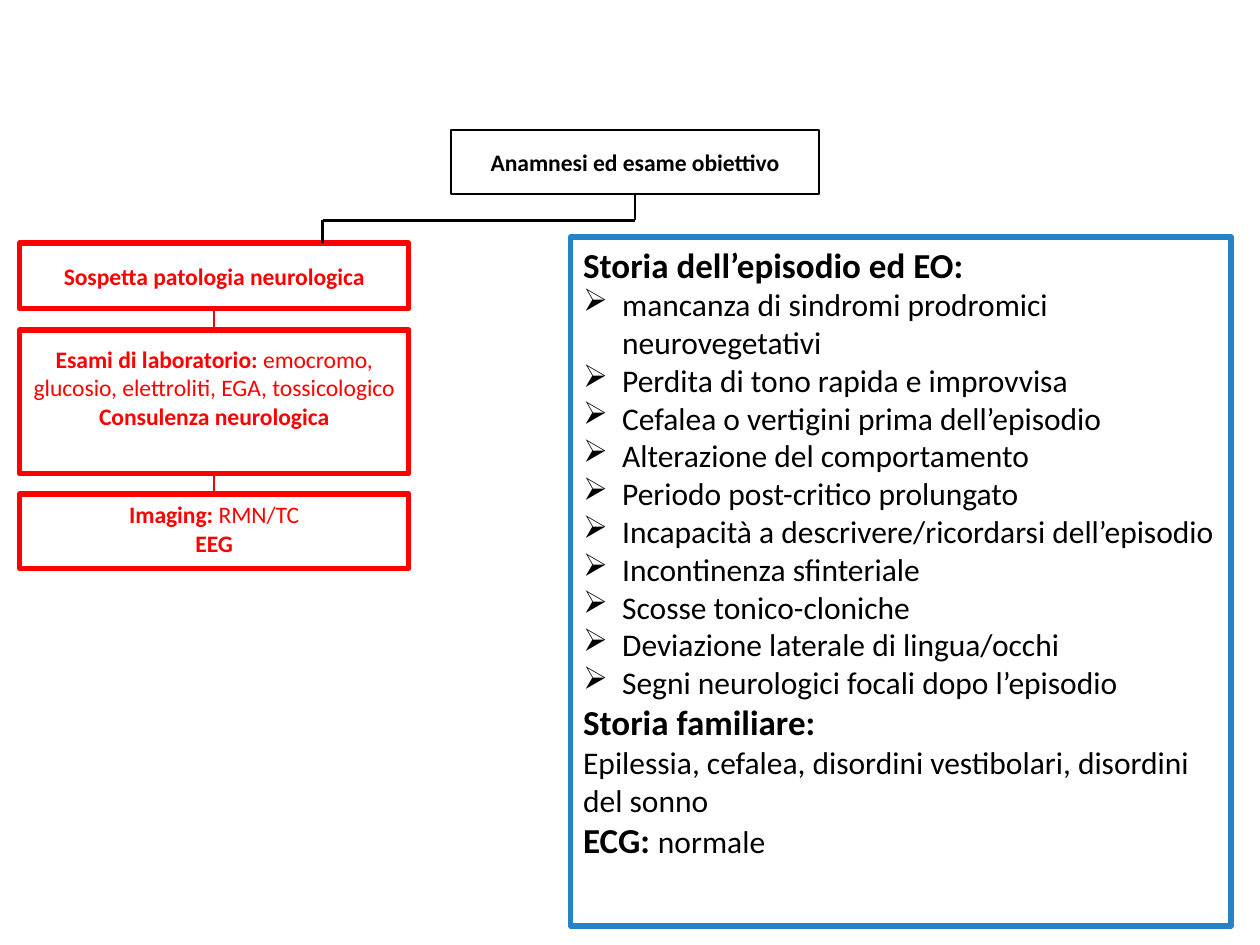
from lxml.etree import SubElement as Sub
from pptx import Presentation
from pptx.dml.color import RGBColor as Rgb
from pptx.enum.shapes import MSO_CONNECTOR as Conn, MSO_SHAPE as Geo
from pptx.enum.text import MSO_ANCHOR as Anchor, PP_ALIGN as Align
from pptx.oxml.ns import qn
from pptx.util import Inches, Pt

W, H = Inches(10), Inches(7.5)
HUES = {"ink": "000000", "red": "FF0000", "blue": "2683C6", "paper": "FFFFFF"}
LEFT, WIDE = 1.55, 30.9
HEAD, BODY = {"size": Pt(20), "bold": True}, {"size": Pt(18), "bold": False}
BOLD, THIN = {"size": Pt(13.5), "bold": True}, {"size": Pt(13.5), "bold": False}

SIGNS = [
    "mancanza di sindromi prodromici neurovegetativi",
    "Perdita di tono rapida e improvvisa",
    "Cefalea o vertigini prima dell’episodio",
    "Alterazione del comportamento",
    "Periodo post-critico prolungato",
    "Incapacità a descrivere/ricordarsi dell’episodio",
    "Incontinenza sfinteriale",
    "Scosse tonico-cloniche",
    "Deviazione laterale di lingua/occhi",
    "Segni neurologici focali dopo l’episodio",
]
STORY = [
    [("Storia dell’episodio ed EO:", HEAD)],
    *[[(sign, BODY)] for sign in SIGNS],
    [("Storia familiare:", HEAD)],
    [("Epilessia, cefalea, disordini vestibolari, disordini del sonno", BODY)],
    [("ECG: ", HEAD), ("normale", BODY)],
]
LAB = [
    [("Esami di laboratorio: ", BOLD),
     ("emocromo, glucosio, elettroliti, EGA, tossicologico", THIN)],
    [("Consulenza neurologica", BOLD)],
]
SCAN = [[("Imaging: ", BOLD), ("RMN/TC", THIN)], [("EEG", BOLD)]]


def share(x, y):
    """Turn percentages of the slide's width and height into lengths."""
    return int(W * x / 100), int(H * y / 100)


def style(item, form):
    """Set each attribute named in the format dict."""
    for name, value in form.items():
        setattr(item, name, value)


def add_box(slide, area, edge, weight, paras, hue, align=Align.CENTER, **form):
    """Add a framed rectangle holding paragraphs of formatted runs."""
    box = slide.shapes.add_shape(Geo.RECTANGLE, *share(*area[:2]), *share(*area[2:]))
    box.shadow.inherit = False
    box.fill.solid()
    box.fill.fore_color.rgb = Rgb.from_string(HUES["paper"])
    box.line.color.rgb = Rgb.from_string(HUES[edge])
    box.line.width = Pt(weight)
    frame = box.text_frame
    style(frame, {"word_wrap": True, "vertical_anchor": Anchor.MIDDLE, **form})
    for i, runs in enumerate(paras):
        para = frame.paragraphs[0] if i == 0 else frame.add_paragraph()
        para.alignment = align
        for text, look in runs:
            run = para.add_run()
            run.text = text
            style(run.font, {"name": "Calibri", **look})
            run.font.color.rgb = Rgb.from_string(HUES[hue])
    return box


def add_mark(para):
    """Give a paragraph an arrow bullet with a hanging indent."""
    props = para._p.get_or_add_pPr()
    props.set("marL", str(Inches(0.31)))
    props.set("indent", str(-Inches(0.31)))
    Sub(props, qn("a:buChar")).set("char", "➢")


def add_line(slide, hue, start, end, top=None, foot=None):
    """Draw a straight line, joined to the boxes given above and below."""
    line = slide.shapes.add_connector(Conn.STRAIGHT, *share(*start), *share(*end))
    if top:
        line.begin_connect(top, 2)
    if foot:
        line.end_connect(foot, 0)
    line.line.color.rgb = Rgb.from_string(HUES[hue])
    line.line.width = Pt(1.25)
    Sub(line._element.spPr, qn("a:effectLst"))


def main():
    """Build the slide and save it."""
    deck = Presentation()
    deck.slide_width, deck.slide_height = W, H
    slide = deck.slides.add_slide(deck.slide_layouts[6])
    root = add_box(slide, (35.8, 13.73, 29.2, 6.8), "ink", 1.25,
                   [[("Anamnesi ed esame obiettivo", BOLD)]], "ink")
    doubt = add_box(slide, (LEFT, 25.73, WIDE, 6.93), "red", 3,
                    [[("Sospetta patologia neurologica", BOLD)]], "red")
    lab = add_box(slide, (LEFT, 34.93, WIDE, 15.2), "red", 3, LAB, "red",
                  margin_bottom=Inches(0.28))
    scan = add_box(slide, (LEFT, 52.27, WIDE, 7.87), "red", 3, SCAN, "red",
                   vertical_anchor=Anchor.TOP)
    story = add_box(slide, (45.3, 25.07, 52.4, 72.93), "blue", 3, STORY, "ink",
                    Align.LEFT, vertical_anchor=Anchor.TOP)
    for para in story.text_frame.paragraphs[1:len(SIGNS) + 1]:
        add_mark(para)

    mid, bend, drop = 50.4, 23.33, 25.6
    add_line(slide, "ink", (mid, 20.53), (mid, bend), top=root)
    add_line(slide, "ink", (drop, bend), (mid, bend))
    add_line(slide, "ink", (drop, bend), (drop, 25.73))
    axis = LEFT + WIDE / 2
    for top, foot in ((doubt, lab), (lab, scan)):
        add_line(slide, "red", (axis, 32.66), (axis, 34.93), top, foot)
    deck.save("out.pptx")


if __name__ == "__main__":
    main()
